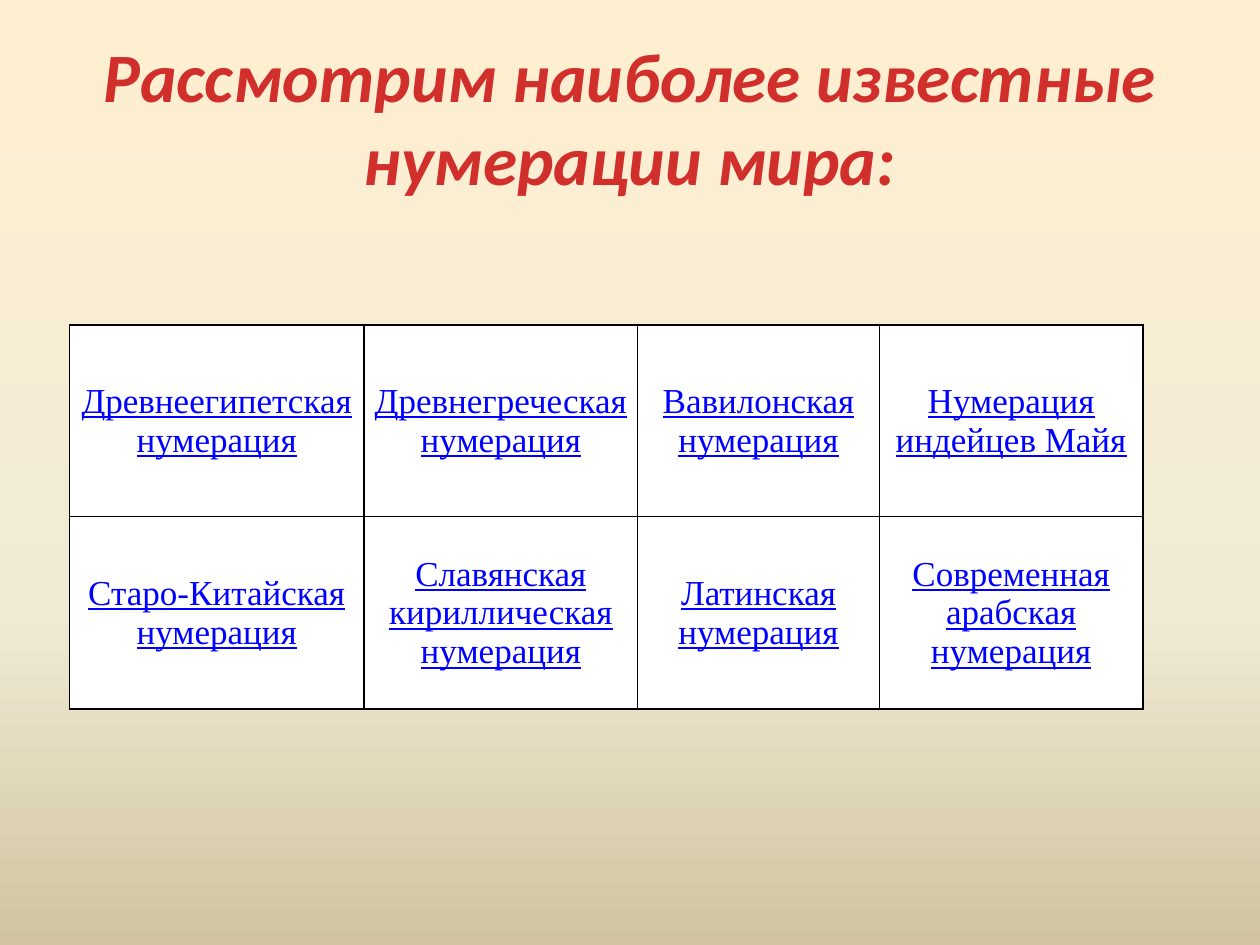
from dataclasses import dataclass

from lxml.etree import SubElement
from pptx import Presentation
from pptx.dml.color import RGBColor
from pptx.enum.text import MSO_ANCHOR as Anchor, PP_ALIGN as Align
from pptx.oxml.ns import qn
from pptx.util import Pt


@dataclass(frozen=True)
class Stop:
    percent: int
    color: str


@dataclass(frozen=True)
class Column:
    width: float
    labels: tuple[str, str]


BACKGROUND = (Stop(0, "FFEFD1"), Stop(65, "F0EBD5"), Stop(100, "D1C39F"))
TITLE_COLORS = (Stop(0, "FC7C7A"), Stop(75, "D02F2C"), Stop(100, "C70500"))
COLUMNS = (
    Column(168.5, ("Древнеегипетская нумерация", "Старо-Китайская нумерация")),
    Column(156.3, ("Древнегреческая нумерация", "Славянская кириллическая нумерация")),
    Column(138.2, ("Вавилонская нумерация", "Латинская нумерация")),
    Column(150.5, ("Нумерация индейцев Майя", "Современная арабская нумерация")),
)
ROW_HEIGHTS = (109.5, 110)
CELL_MARGIN = 5


def rgb(color: str) -> RGBColor:
    return RGBColor.from_string(color)


def apply_gradient(fill, element, stops: tuple[Stop, ...]) -> None:
    """Fill from top to bottom; element is the XML that holds the fill."""
    fill.gradient()
    fill.gradient_angle = 270
    stop_list = element.xpath(".//a:gsLst")[0]
    for old_stop in list(stop_list):
        stop_list.remove(old_stop)
    for stop in stops:
        node = SubElement(stop_list, qn("a:gs"), pos=str(stop.percent * 1000))
        SubElement(node, qn("a:srgbClr"), val=stop.color)


def write_text(frame, text: str, *, font: str, size: float, color: str = "",
               bold: bool = False, italic: bool = False, underline: bool = False):
    """Write one centred paragraph and return its run."""
    frame.word_wrap = True
    paragraph = frame.paragraphs[0]
    paragraph.alignment = Align.CENTER
    run = paragraph.add_run()
    run.text = text
    run.font.name = font
    run.font.size = Pt(size)
    run.font.bold, run.font.italic, run.font.underline = bold, italic, underline
    if color:
        run.font.color.rgb = rgb(color)
    return run


def add_borders(cell, color: str, width: float) -> None:
    properties = cell._tc.get_or_add_tcPr()
    for side in ("lnL", "lnR", "lnT", "lnB"):
        line = SubElement(properties, qn(f"a:{side}"), w=str(Pt(width)))
        fill = SubElement(line, qn("a:solidFill"))
        SubElement(fill, qn("a:srgbClr"), val=color)


def format_cell(cell, text: str) -> None:
    cell.margin_left = cell.margin_right = Pt(CELL_MARGIN)
    cell.margin_top = cell.margin_bottom = Pt(CELL_MARGIN)
    cell.vertical_anchor = Anchor.MIDDLE
    add_borders(cell, "000000", 1)
    cell.fill.solid()
    cell.fill.fore_color.rgb = rgb("FFFFFF")
    write_text(cell.text_frame, text, font="Times New Roman", size=20,
               color="0000FF", underline=True)


def add_title(slide) -> None:
    title = slide.shapes.title
    title.left, title.top, title.width, title.height = Pt(36), Pt(21.6), Pt(648), Pt(90)
    title.text_frame.vertical_anchor = Anchor.MIDDLE
    run = write_text(title.text_frame, "Рассмотрим наиболее известные нумерации мира:",
                     font="Calibri", size=39.6, bold=True, italic=True)
    apply_gradient(run.font.fill, run._r, TITLE_COLORS)


def add_numeration_table(slide) -> None:
    width = sum(column.width for column in COLUMNS)
    table = slide.shapes.add_table(
        len(ROW_HEIGHTS), len(COLUMNS), Pt(39.6), Pt(185.8),
        Pt(width), Pt(sum(ROW_HEIGHTS))).table
    table.first_row = table.horz_banding = False
    for row, height in zip(table.rows, ROW_HEIGHTS):
        row.height = Pt(height)
    for column_index, column in enumerate(COLUMNS):
        table.columns[column_index].width = Pt(column.width)
        for row_index, label in enumerate(column.labels):
            format_cell(table.cell(row_index, column_index), label)


def main() -> None:
    presentation = Presentation()
    presentation.slide_width, presentation.slide_height = Pt(720), Pt(540)
    # Title-only layout
    slide = presentation.slides.add_slide(presentation.slide_layouts[5])
    apply_gradient(slide.background.fill, slide.element, BACKGROUND)
    add_title(slide)
    add_numeration_table(slide)
    presentation.save("out.pptx")


if __name__ == "__main__":
    main()
